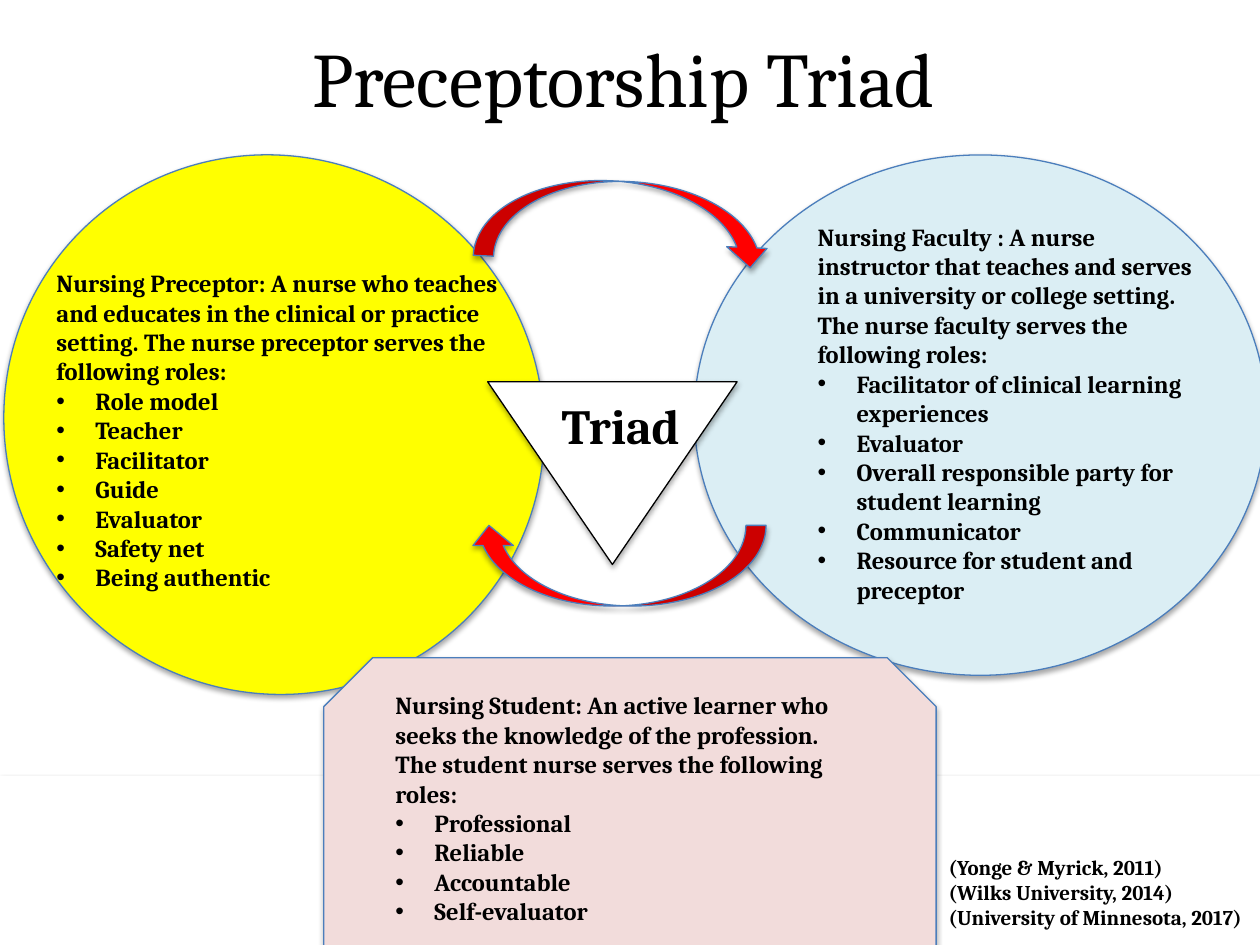
"""Build the Preceptorship Triad slide."""
from dataclasses import dataclass

from lxml.etree import SubElement
from pptx import Presentation
from pptx.dml.color import RGBColor
from pptx.enum.shapes import MSO_SHAPE
from pptx.enum.text import MSO_ANCHOR, MSO_AUTO_SIZE, PP_ALIGN
from pptx.oxml.ns import qn
from pptx.util import Inches, Pt


@dataclass(frozen=True)
class Theme:
    font: str = "Cambria"
    black: str = "000000"
    white: str = "FFFFFF"
    outline: str = "4B7EBC"
    preceptor: str = "FFFF00"
    faculty: str = "DBEEF4"
    student: str = "F2DCDB"
    arrow: str = "FF0000"
    title_size: int = 44
    triad_size: int = 28
    body_size: int = 14
    citation_size: int = 12


theme = Theme()


def add_shadowed_shape(slide, kind, position, fill, line, rotation=0):
    shape = slide.shapes.add_shape(kind, *map(Inches, position))
    shape.rotation = rotation
    shape.fill.solid()
    shape.fill.fore_color.rgb = RGBColor.from_string(fill)
    if line:
        shape.line.color.rgb = RGBColor.from_string(line)
        shape.line.width = Pt(0.75)
    else:
        shape.line.fill.background()
    shape.shadow.inherit = False
    effects = shape._element.spPr.find(qn("a:effectLst"))
    shadow = SubElement(effects, qn("a:outerShdw"), blurRad=str(Pt(3.1)),
                        dist=str(Pt(1.8)), dir="5400000", rotWithShape="0")
    color = SubElement(shadow, qn("a:srgbClr"), val=theme.black)
    SubElement(color, qn("a:alpha"), val="35000")


def add_text(slide, position, size, lines, bullets=()):
    box = slide.shapes.add_textbox(*map(Inches, position))
    frame = box.text_frame
    frame.word_wrap = True
    frame.auto_size = MSO_AUTO_SIZE.SHAPE_TO_FIT_TEXT
    frame.text = "\n".join([*lines, *bullets])
    for index, para in enumerate(frame.paragraphs):
        if index >= len(lines):
            properties = para._p.get_or_add_pPr()
            properties.set("marL", str(Inches(0.31)))
            properties.set("indent", str(Inches(-0.31)))
            SubElement(properties, qn("a:buFont"), typeface="Arial")
            SubElement(properties, qn("a:buChar"), char="•")
        for span in para.runs:
            span.font.name = theme.font
            span.font.size = Pt(size)
            span.font.bold = True
            span.font.color.rgb = RGBColor.from_string(theme.black)


deck = Presentation()
deck.slide_width, deck.slide_height = Inches(10), Inches(7.5)
page = deck.slides.add_slide(deck.slide_layouts[5])

add_shadowed_shape(page, MSO_SHAPE.OVAL, (5.51, 1.23, 4.54, 4.13),
                   theme.faculty, theme.outline)
add_shadowed_shape(page, MSO_SHAPE.OVAL, (0.06, 1.2, 4.23, 4.34),
                   theme.preceptor, theme.outline, 313.5)

title = page.shapes.title
title.left, title.top, title.width, title.height = map(Inches, (0.45, -0.02, 9, 1.25))
title.text_frame.text = "Preceptorship Triad"
title.text_frame.vertical_anchor = MSO_ANCHOR.MIDDLE
heading = title.text_frame.paragraphs[0]
heading.alignment = PP_ALIGN.CENTER
heading_font = heading.runs[0].font
heading_font.name = theme.font
heading_font.size = Pt(theme.title_size)
heading_font.color.rgb = RGBColor.from_string(theme.black)

add_text(page, (0.35, 2.08, 3.77, 2.93), theme.body_size,
         ["Nursing Preceptor: A nurse who teaches and educates in the clinical or "
          "practice setting. The nurse preceptor serves the following roles:"],
         ["Role model", "Teacher", "Facilitator", "Guide", "Evaluator",
          "Safety net", "Being authentic"])
add_text(page, (6.39, 1.71, 3.25, 3.4), theme.body_size,
         ["Nursing Faculty : A nurse instructor that teaches and serves in a "
          "university or college setting.",
          "The nurse faculty serves the following roles:"],
         ["Facilitator of clinical learning experiences", "Evaluator",
          "Overall responsible party for student learning", "Communicator",
          "Resource for student and preceptor"])

add_shadowed_shape(page, MSO_SHAPE.RECTANGLE, (0, 6.16, 10.01, 1.37), theme.white, None)
add_shadowed_shape(page, MSO_SHAPE.SNIP_2_SAME_RECTANGLE, (2.57, 5.22, 4.86, 2.33),
                   theme.student, theme.outline)
add_text(page, (3.04, 5.43, 3.76, 1.99), theme.body_size,
         ["Nursing Student: An active learner who seeks the knowledge of the profession.",
          "The student nurse serves the following roles:"],
         ["Professional", "Reliable", "Accountable", "Self-evaluator"])

for left, top, rotation in ((4.63, 0.58, 272.6), (4.58, 3.31, 90)):
    add_shadowed_shape(page, MSO_SHAPE.CURVED_LEFT_ARROW, (left, top, 0.64, 2.36),
                       theme.arrow, theme.outline, rotation)

add_shadowed_shape(page, MSO_SHAPE.ISOSCELES_TRIANGLE, (3.87, 3.03, 1.98, 1.45),
                   theme.white, theme.black, 180)
add_text(page, (4.36, 3.09, 1.27, 0.57), theme.triad_size, ["Triad"])
add_text(page, (7.43, 6.73, 2.79, 1.01), theme.citation_size,
         ["(Yonge & Myrick, 2011)", "(Wilks University, 2014)",
          "(University of Minnesota, 2017)"])

deck.save("out.pptx")
